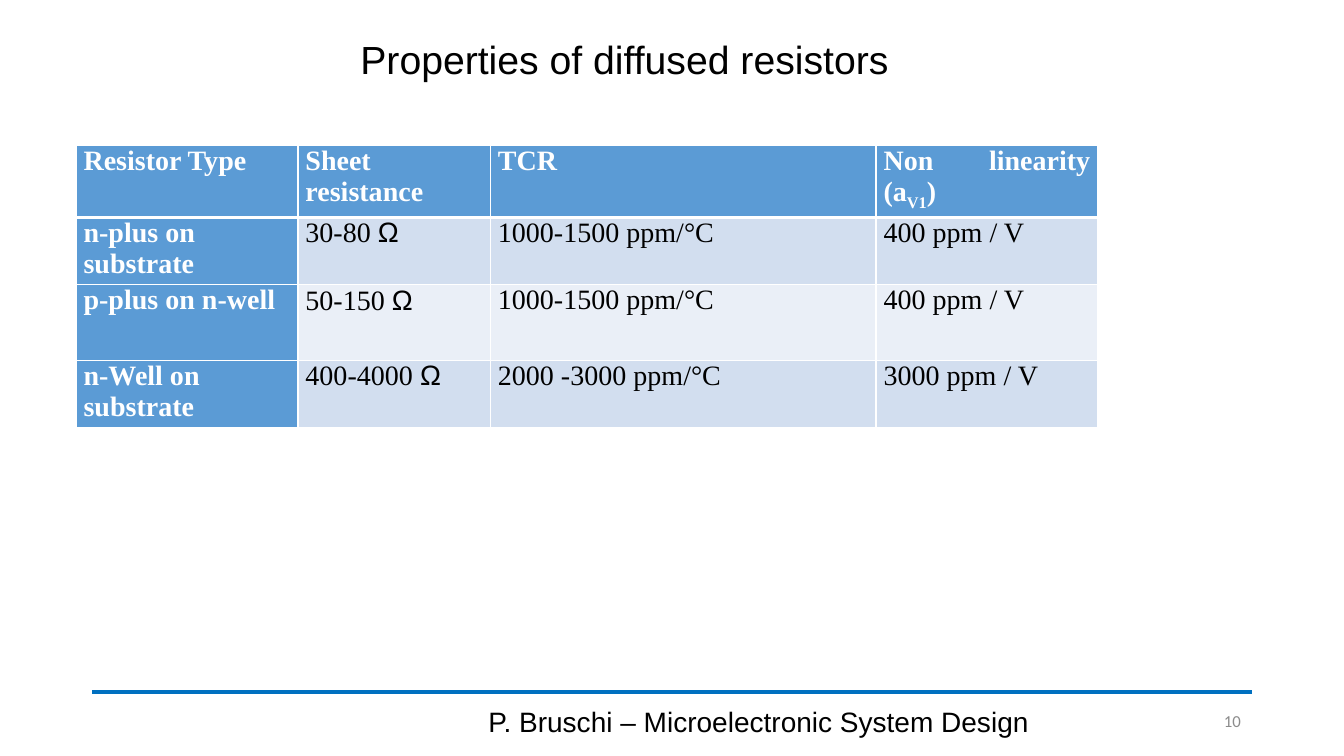
from lxml import etree
from pptx import Presentation
from pptx import util as u
from pptx.dml import color
from pptx.enum import shapes, text
from pptx.oxml import ns

COLORS = {"black": "000000", "white": "FFFFFF", "grey": "8C8C8C", "rule": "0070C0",
          "head": "5B9BD5", "odd": "D2DEEF", "even": "EAEFF7"}
ALIGN = text.PP_ALIGN
SERIF = "Times New Roman"


class SlideBuilder:
    """Draws styled elements on one slide, with lengths in points."""

    def __init__(self, page):
        self.page = page

    def rgb(self, name):
        return color.RGBColor.from_string(COLORS[name])

    def add_span(self, para, words, size, font, tint, bold=False, subscript=False):
        span = para.add_run()
        span.text = words
        span.font.size = u.Pt(size)
        span.font.name = font
        span.font.bold = bold
        span.font.color.rgb = self.rgb(tint)
        if subscript:
            span.font._element.set("baseline", "-25000")

    def label(self, bounds, words, size, font="Arial", tint="black", align=ALIGN.CENTER, spacing=1.0):
        box = self.page.shapes.add_textbox(*map(u.Pt, bounds))
        frame = box.text_frame
        frame.word_wrap = True
        frame.vertical_anchor = text.MSO_ANCHOR.MIDDLE
        para = frame.paragraphs[0]
        para.alignment = align
        para.line_spacing = spacing
        self.add_span(para, words, size, font, tint)

    def rule(self, start, end, width):
        line = self.page.shapes.add_connector(
            shapes.MSO_CONNECTOR.STRAIGHT, *map(u.Pt, start + end))
        line.line.color.rgb = self.rgb("rule")
        line.line.width = u.Pt(width)
        etree.SubElement(line._element.spPr, ns.qn("a:effectLst"))

    def border(self, cell, side, width):
        edge = etree.SubElement(cell._tc.get_or_add_tcPr(), ns.qn(f"a:ln{side}"),
                                w=str(u.Pt(width)))
        fill = etree.SubElement(edge, ns.qn("a:solidFill"))
        etree.SubElement(fill, ns.qn("a:srgbClr"), val=COLORS["white"])

    def cell(self, cell, spans, row, column):
        heading = row == 0 or column == 0
        widths = {"L": 1, "R": 1, "T": 3 if row == 1 else 1, "B": 3 if row == 0 else 1}
        for side, width in widths.items():
            self.border(cell, side, width)
        cell.fill.solid()
        cell.fill.fore_color.rgb = self.rgb("head" if heading else "odd" if row % 2 else "even")
        cell.margin_left = cell.margin_right = u.Pt(5.4)
        cell.margin_top = cell.margin_bottom = 0
        para = cell.text_frame.paragraphs[0]
        para.alignment = ALIGN.LEFT if row and column == 0 else ALIGN.JUSTIFY
        para.space_after = u.Pt(6)
        for words in spans:
            self.add_span(para, words, 20, "Arial" if words == "Ω" else SERIF,
                          "white" if heading else "black", heading, words == "V1")

    def table(self, left, top, widths, heights, rows):
        bounds = (left, top, sum(widths), sum(heights))
        grid = self.page.shapes.add_table(len(rows), len(widths), *map(u.Pt, bounds)).table
        grid.first_col = True
        for column, width in zip(grid.columns, widths):
            column.width = u.Pt(width)
        for line, height in zip(grid.rows, heights):
            line.height = u.Pt(height)
        for row, entries in enumerate(rows):
            for column, spans in enumerate(entries):
                self.cell(grid.cell(row, column), spans, row, column)


RESISTORS = [
    [["Resistor Type"], ["Sheet resistance"], ["TCR"], ["Non linearity (a", "V1", ")"]],
    [["n-plus on substrate"], ["30-80 ", "Ω"], ["1000-1500 ppm/°C"], ["400 ppm / V"]],
    [["p-plus on n-well"], ["50-150 ", "Ω"], ["1000-1500 ppm/°C"], ["400 ppm / V"]],
    [["n-Well on substrate"], ["400-4000 ", "Ω"], ["2000 -3000 ppm/°C"], ["3000 ppm / V"]],
]


def main():
    deck = Presentation()
    deck.slide_width, deck.slide_height = u.Pt(960), u.Pt(540)
    builder = SlideBuilder(deck.slides.add_slide(deck.slide_layouts[6]))
    builder.rule((66, 494), (894, 494), 2.75)
    builder.label((32, 18, 828, 52), "Properties of diffused resistors", 28, spacing=0.9)
    builder.label((318, 500.5, 448, 28.8), "P. Bruschi – Microelectronic System Design", 20)
    builder.label((824.5, 500.5, 69, 28.8), "10", 12, "Calibri", "grey", ALIGN.RIGHT)
    builder.table(54.3, 104, (158.5, 137.5, 275.5, 158.5), (37.5, 37.5, 54, 37.5), RESISTORS)
    deck.save("out.pptx")


if __name__ == "__main__":
    main()
